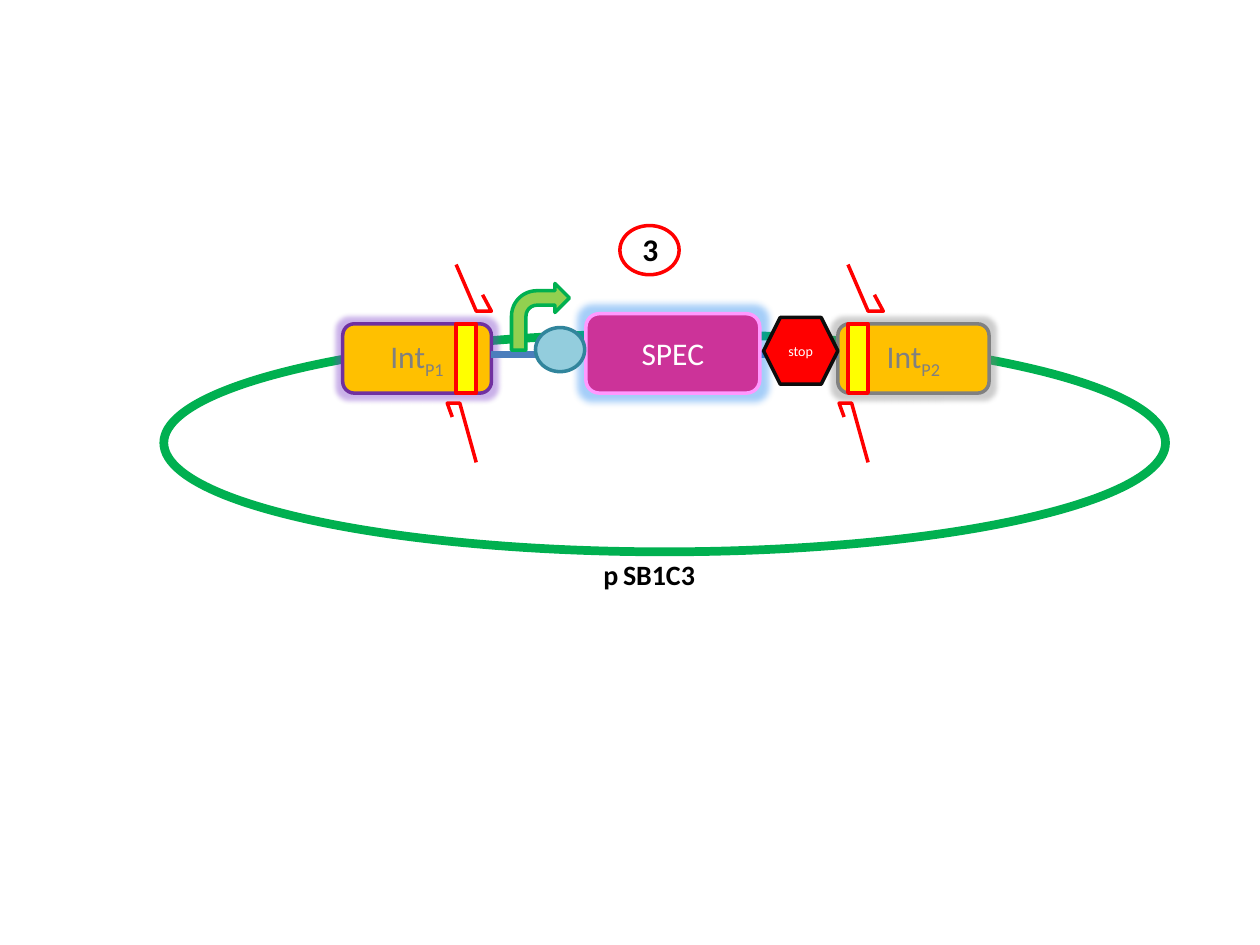
from lxml.etree import SubElement
from pptx import Presentation
from pptx.dml.color import RGBColor as RGB
from pptx.enum.shapes import MSO_CONNECTOR as LINK, MSO_SHAPE as KIND
from pptx.enum.text import MSO_ANCHOR as ANCHOR, PP_ALIGN as ALIGN
from pptx.oxml.ns import qn
from pptx.util import Inches, Pt

BLACK, WHITE = RGB(0, 0, 0), RGB(255, 255, 255)
GREEN, LIME = RGB(0x00, 0xB0, 0x50), RGB(0x92, 0xD0, 0x50)
GOLD, YELLOW = RGB(0xFF, 0xC0, 0x00), RGB(0xFF, 0xFF, 0x00)
PURPLE, GREY = RGB(0x70, 0x30, 0xA0), RGB(0x80, 0x80, 0x80)
BLUE, RED = RGB(0x4B, 0x7E, 0xBC), RGB(0xFF, 0, 0)
PINK, ROSE = RGB(0xCC, 0x33, 0x99), RGB(0xFF, 0x99, 0xFF)
AQUA, TEAL = RGB(0x93, 0xCD, 0xDD), RGB(0x31, 0x85, 0x9C)
INK = RGB(0x0D, 0x0D, 0x0D)
LILAC, SKY = RGB(0x7A, 0x3C, 0xC8), RGB(0x1F, 0x85, 0xF0)

LABEL = {"name": "Calibri", "size": Pt(18), "bold": False}
HEAD = {**LABEL, "bold": True}
# Corners of the primer arrows, from the top left of their site
UPPER = [(0, -0.47), (0.16, -0.1), (0.28, -0.1), (0.21, -0.23)]
LOWER = [(0.16, 1.1), (0.03, 0.63), (-0.07, 0.63), (-0.03, 0.74)]


def paint(shape, fill, line, width=2):
    shape.shadow.inherit = False
    if fill is None:
        shape.fill.background()
    else:
        shape.fill.solid()
        shape.fill.fore_color.rgb = fill
    shape.line.color.rgb = line
    shape.line.width = Pt(width)


def add_form(slide, kind, box, fill, line, width=2):
    form = slide.shapes.add_shape(kind, *map(Inches, box))
    paint(form, fill, line, width)
    return form


def add_run(para, text, style, color):
    run = para.add_run()
    run.text = text
    for key, value in style.items():
        setattr(run.font, key, value)
    run.font.color.rgb = color
    return run


def write(shape, text, style, color, sub=""):
    """Centre a label in a shape, with an optional subscript."""
    frame = shape.text_frame
    frame.vertical_anchor = ANCHOR.MIDDLE
    para = frame.paragraphs[0]
    para.alignment = ALIGN.CENTER
    add_run(para, text, style, color)
    if sub:
        run = add_run(para, sub, style, color)
        run._r.get_or_add_rPr().set("baseline", "-25000")


def add_glow(shape, color, size):
    effects = shape._element.spPr.find(qn("a:effectLst"))
    glow = SubElement(effects, qn("a:glow"), rad=str(Pt(size)))
    tint = SubElement(glow, qn("a:srgbClr"), val=str(color))
    SubElement(tint, qn("a:alpha"), val="40000")


def add_gene(slide, box, fill, line, glow, size, text, color, sub=""):
    gene = add_form(slide, KIND.ROUNDED_RECTANGLE, box, fill, line)
    add_glow(gene, glow, size)
    write(gene, text, LABEL, color, sub)


def add_note(slide, box, parts):
    note = slide.shapes.add_textbox(*map(Inches, box))
    note.text_frame.word_wrap = True
    for text, size in parts:
        style = {**HEAD, "size": Pt(size)}
        add_run(note.text_frame.paragraphs[0], text, style, BLACK)


def add_strand(slide, left, right, y):
    ends = map(Inches, (left, y, right, y))
    strand = slide.shapes.add_connector(LINK.STRAIGHT, *ends)
    strand.line.color.rgb = BLUE
    strand.line.width = Pt(4)
    SubElement(strand._element.spPr, qn("a:effectLst"))


def add_site(slide, x, y):
    """Draw a primer site with its forward and reverse primers."""
    add_form(slide, KIND.RECTANGLE, (x, y, 0.16, 0.55), YELLOW, RED)
    for path_points in (UPPER, LOWER):
        points = [(Inches(x + dx), Inches(y + dy)) for dx, dy in path_points]
        pen = slide.shapes.build_freeform(*points[0])
        pen.add_line_segments(points[1:], close=False)
        paint(pen.convert_to_shape(), None, RED)


def add_insert(slide, x, y):
    """Draw the gene cassette from the left end of its first box."""
    add_gene(slide, (x, y, 1.18, 0.55), GOLD, PURPLE, LILAC, 6,
             "Int", GREY, "P1")
    add_gene(slide, (x + 3.93, y, 1.2, 0.55), GOLD, GREY, GREY, 6,
             "Int", GREY, "P2")
    add_strand(slide, x + 1.18, x + 3.93, y + 0.24)
    add_form(slide, KIND.BENT_ARROW, (x + 1.34, y - 0.32, 0.46, 0.53),
             LIME, GREEN)
    add_gene(slide, (x + 1.93, y - 0.08, 1.38, 0.63), PINK, ROSE, SKY, 8,
             "SPEC", WHITE)
    add_form(slide, KIND.OVAL, (x + 1.53, y + 0.03, 0.39, 0.35), AQUA, TEAL)
    stop = add_form(slide, KIND.HEXAGON, (x + 3.34, y - 0.05, 0.59, 0.53),
                    RED, INK)
    frame = stop.text_frame
    for side in ("left", "right", "top", "bottom"):
        setattr(frame, f"margin_{side}", 0)
    write(stop, "stop", {**LABEL, "size": Pt(8)}, WHITE)
    for dx in (0.9, 4.01):
        add_site(slide, x + dx, y)


def add_badge(slide, x, y):
    add_note(slide, (x + 0.08, y - 0.01, 0.63, 0.4), [("3", 18)])
    add_form(slide, KIND.OVAL, (x, y, 0.47, 0.39), None, RED)


def main():
    deck = Presentation()
    deck.slide_width, deck.slide_height = Inches(10), Inches(7.5)
    slide = deck.slides.add_slide(deck.slide_layouts[6])
    add_form(slide, KIND.OVAL, (1.3, 2.65, 7.95, 1.73), None, GREEN, 5)
    add_insert(slide, 2.72, 2.57)
    add_note(slide, (4.69, 4.38, 0.94, 0.37),
             [("p", 16), (" ", 12), ("SB1C3", 16)])
    add_badge(slide, 4.92, 1.79)
    deck.save("out.pptx")


if __name__ == "__main__":
    main()
